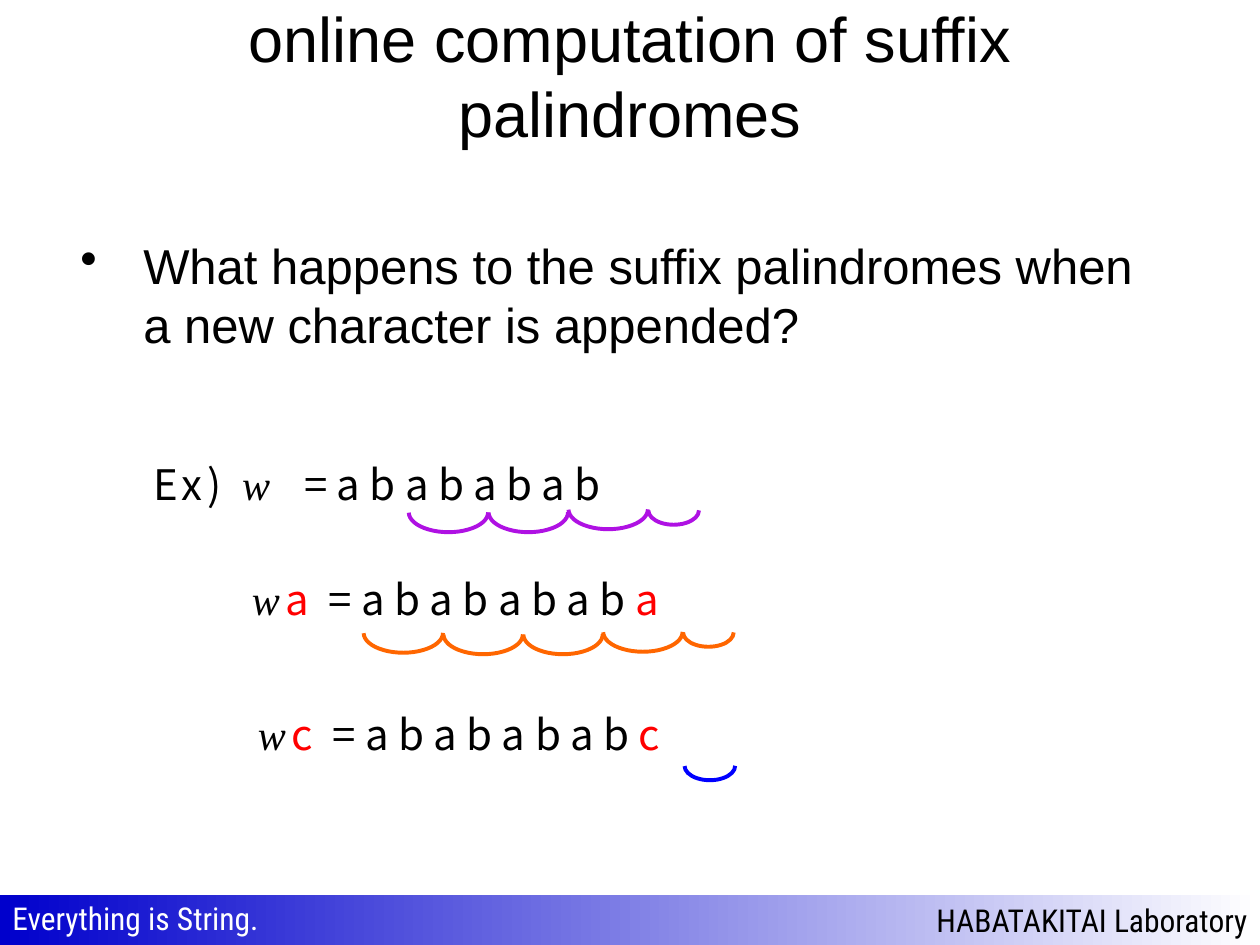
from dataclasses import dataclass

from lxml import etree
from pptx import Presentation
from pptx.dml.color import RGBColor
from pptx.enum import shapes, text
from pptx.oxml import ns
from pptx.util import Cm, Pt


@dataclass(frozen=True)
class Theme:
    black: RGBColor = RGBColor(0x00, 0x00, 0x00)
    white: RGBColor = RGBColor(0xFF, 0xFF, 0xFF)
    red: RGBColor = RGBColor(0xFF, 0x00, 0x00)
    purple: RGBColor = RGBColor(0xAF, 0x11, 0xE3)
    orange: RGBColor = RGBColor(0xFF, 0x66, 0x00)
    blue: RGBColor = RGBColor(0x00, 0x00, 0xFF)
    band: RGBColor = RGBColor(0x00, 0x00, 0xCC)
    title: Pt = Pt(36)
    body: Pt = Pt(28)
    example: Pt = Pt(24)
    footer: Pt = Pt(18)
    sans: str = "Arial"
    letters: str = "Noto Sans CJK JP"
    variable: str = "Times New Roman"
    condensed: str = "Roboto Condensed"


theme = Theme()
deck = Presentation()
deck.slide_width, deck.slide_height = Cm(25.4), Cm(19.05)
slide = deck.slides.add_slide(deck.slide_layouts[6])


def add_text(left, top, width, height, size, words="", font=None, color=theme.black):
    """Add a wrapped text box and return its only paragraph."""
    box = slide.shapes.add_textbox(Cm(left), Cm(top), Cm(width), Cm(height))
    box.text_frame.word_wrap = True
    paragraph = box.text_frame.paragraphs[0]
    paragraph.font.size = size
    paragraph.font.color.rgb = color
    if words:
        paragraph.font.name = font
        paragraph.add_run().text = words
    return paragraph


def add_arc(group, left, middle, span, depth, color):
    """Add the lower half of an ellipse: an arc turned by a quarter."""
    arc = group.shapes.add_shape(
        shapes.MSO_SHAPE.ARC, Cm(left + (span - depth) / 2),
        Cm(middle - span / 2), Cm(depth), Cm(span))
    arc.rotation = 90
    arc.adjustments[0], arc.adjustments[1] = 162, 53.683
    arc.shadow.inherit = False
    arc.fill.background()
    arc.line.color.rgb = color
    arc.line.width = Pt(2.25)


# Footer band
band = slide.shapes.add_shape(
    shapes.MSO_SHAPE.RECTANGLE, Cm(0), Cm(18.05), Cm(25.4), Cm(1))
band.shadow.inherit = False
band.line.fill.background()
band.fill.gradient()
band.fill.gradient_angle = 0
for stop, color in zip(band.fill.gradient_stops, (theme.band, theme.white)):
    stop.color.rgb = color
band.text_frame.vertical_anchor = text.MSO_ANCHOR.MIDDLE
laboratory = band.text_frame.paragraphs[0]
laboratory.alignment = text.PP_ALIGN.RIGHT
laboratory.font.size = theme.footer
laboratory.font.name = theme.condensed
laboratory.font.color.rgb = theme.black
laboratory.add_run().text = "HABATAKITAI Laboratory"
add_text(0, 18, 5.64, 1.02, theme.footer, "Everything is String.",
         theme.condensed, theme.white)

# Title
title = add_text(1.27, 0.33, 22.86, 2.36, theme.title,
                 "online computation of suffix palindromes", theme.sans)
title.alignment = text.PP_ALIGN.CENTER
slide.shapes[-1].text_frame.vertical_anchor = text.MSO_ANCHOR.MIDDLE

# Question
question = add_text(
    1.37, 4.62, 22.15, 13.46, theme.body,
    "What happens to the suffix palindromes when a new character is appended?",
    theme.sans)
question.space_before = Pt(6.2)
properties = question._p.get_or_add_pPr()
properties.set("marL", str(Cm(1.27)))
properties.set("indent", str(-Cm(1.27)))
bullet = etree.SubElement(properties, ns.qn("a:buChar"))
bullet.set("char", "•")
properties.insert(1, bullet)  # after the spacing, before the font

# Example strings: runs of (words, font, colour, letter spacing in points)
w = ("w", theme.variable, theme.black, 3)
string = "= a b a b a b a b"
examples = [
    (2.84, 9.12, [("Ex) ", theme.letters, theme.black, 3), w,
                  (" ", theme.letters, theme.black, 11),
                  (string, theme.letters, theme.black, 0)]),
]
for left, top, appended in ((4.83, 11.43, "a"), (4.95, 14.15, "c")):
    examples.append((left, top, [
        w, (appended + " ", theme.letters, theme.red, 3),
        (string + " ", theme.letters, theme.black, 0),
        (appended, theme.letters, theme.red, 0)]))
for left, top, parts in examples:
    example = add_text(left, top, 11.5, 1.27, theme.example)
    for words, font, color, spacing in parts:
        run = example.add_run()
        run.text = words
        run.font.name = font
        run.font.italic = font == theme.variable
        run.font.color.rgb = color
        run._r.get_or_add_rPr().set("spc", str(spacing * 100))

# Palindrome arcs: wide ones side by side, then a short one
STEP = 1.61
chains = [
    (theme.purple, 8.24, (10.33, 10.33, 10.27), 10.29),
    (theme.orange, 7.33, (12.76, 12.79, 12.79, 12.74), 12.75),
    (theme.blue, 13.8, (), 15.44),
]
for color, left, wide_middles, short_middle in chains:
    chain = slide.shapes.add_group_shape() if wide_middles else slide
    for index, middle in enumerate(wide_middles):
        add_arc(chain, left + index * STEP, middle, 1.6, 0.8, color)
    add_arc(chain, left + len(wide_middles) * STEP, short_middle, 1.02, 0.58, color)

deck.save("out.pptx")
